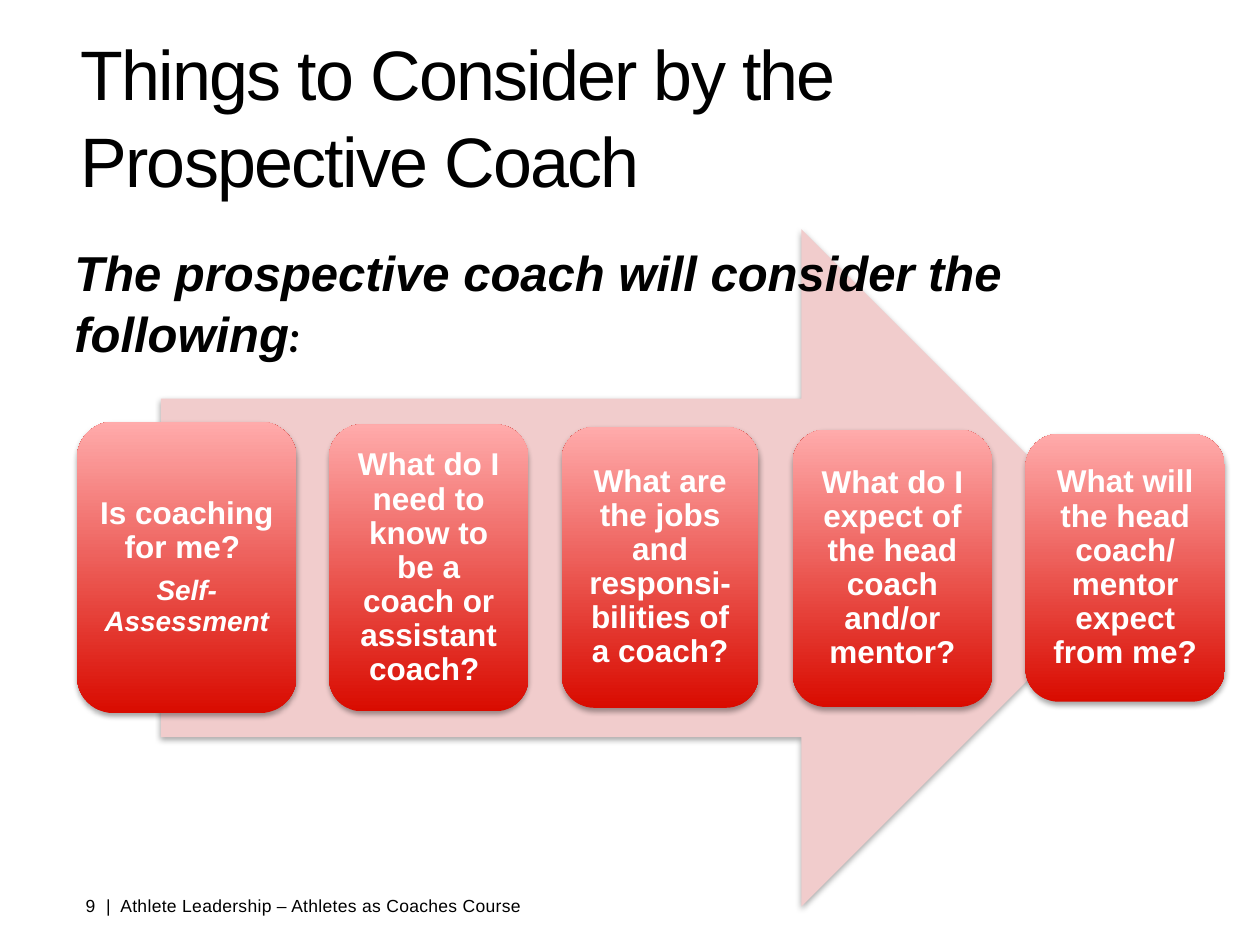
from pptx import Presentation
from pptx.dml.color import RGBColor
from pptx.enum.shapes import MSO_SHAPE as SHAPE
from pptx.enum.text import MSO_ANCHOR as ANCHOR, MSO_AUTO_SIZE as AUTO, PP_ALIGN as ALIGN
from pptx.oxml import parse_xml
from pptx.oxml.ns import nsdecls, qn
from pptx.util import Pt

STEPS = [
    (44, 241, 125.5, 166.5, ["Is coaching for me? ", "Self-Assessment"]),
    (188, 242.5, 114, 164, ["What do I need to know to be a coach or assistant coach? "]),
    (321, 244, 112.5, 160.5, ["What are the jobs and responsi-bilities of a coach?"]),
    (453, 245.5, 114, 158.5, ["What do I expect of the head coach and/or mentor?"]),
    (586, 248, 114, 153, ["What will the head coach/ mentor expect from me?"]),
]


def color(hex_value):
    return RGBColor.from_string(hex_value)


def style_run(r, size, hex_value="000000", bold=False, italic=False, name="Arial", spacing=0):
    r.font.name = name
    r.font.size = Pt(size)
    r.font.bold = bold
    r.font.italic = italic
    r.font.color.rgb = color(hex_value)
    if spacing:
        r._r.get_or_add_rPr().set("spc", str(spacing))


def set_frame(tf, inset_x, inset_y, anchor=ANCHOR.TOP, wrap=True):
    tf.margin_left = tf.margin_right = Pt(inset_x)
    tf.margin_top = tf.margin_bottom = Pt(inset_y)
    tf.vertical_anchor = anchor
    tf.word_wrap = wrap
    tf.auto_size = AUTO.NONE


def add_shape(s, kind, x, y, w, h):
    sp = s.shapes.add_shape(kind, Pt(x), Pt(y), Pt(w), Pt(h))
    sp.line.fill.background()
    sp.shadow.inherit = False
    effects = sp._element.spPr.find(qn("a:effectLst"))
    effects.append(parse_xml(
        f'<a:outerShdw {nsdecls("a")} blurRad="{Pt(3.1)}" dist="{Pt(1.8)}" dir="5400000" '
        'rotWithShape="0"><a:srgbClr val="000000"><a:alpha val="35000"/></a:srgbClr></a:outerShdw>'))
    return sp


def add_title(s, text):
    sp = s.shapes.title
    sp.left, sp.top, sp.width, sp.height = Pt(43), Pt(24.5), Pt(568), Pt(82)
    tf = sp.text_frame
    tf.text = text
    set_frame(tf, 3, 3, ANCHOR.MIDDLE)
    p = tf.paragraphs[0]
    p.alignment = ALIGN.LEFT
    p.line_spacing = 1.04
    style_run(p.runs[0], 40, spacing=-100)


def add_arrow(s):
    sp = add_shape(s, SHAPE.RIGHT_ARROW, 92, 131, 559.5, 387)
    sp.fill.solid()
    sp.fill.fore_color.rgb = color("F1CCCC")


def add_step(s, x, y, w, h, lines):
    sp = add_shape(s, SHAPE.ROUNDED_RECTANGLE, x, y, w, h)
    sp.fill.gradient()
    sp.fill.gradient_angle = 90
    for stop, hex_value in zip(sp.fill.gradient_stops, ("D90B00", "FFABAB")):
        stop.color.rgb = color(hex_value)
    tf = sp.text_frame
    tf.text = "\n".join(lines)
    set_frame(tf, 5, 5, ANCHOR.MIDDLE)
    for i, p in enumerate(tf.paragraphs):
        p.alignment = ALIGN.CENTER
        p.line_spacing = 0.9
        if i:
            p.space_before = Pt(6.3)
        style_run(p.runs[0], 16 if i else 18, "FFFFFF", bold=True, italic=i > 0)


def add_heading(s, text, mark):
    tf = s.shapes.add_textbox(Pt(35.5), Pt(133.5), Pt(651), Pt(75)).text_frame
    set_frame(tf, 7.2, 3.6)
    p = tf.paragraphs[0]
    p.text = text
    p.line_spacing = 1.04
    style_run(p.runs[0], 28, bold=True, italic=True)
    r = p.add_run()
    r.text = mark
    style_run(r, 24, bold=True, italic=True, name="Lato")


def add_footer(s, text):
    tf = s.shapes.add_textbox(Pt(44), Pt(508.5), Pt(291.5), Pt(14.5)).text_frame
    tf.text = text
    set_frame(tf, 5, 3, wrap=False)
    style_run(tf.paragraphs[0].runs[0], 10, spacing=20)


def main():
    prs = Presentation()
    prs.slide_width, prs.slide_height = Pt(720), Pt(540)
    s = prs.slides.add_slide(prs.slide_layouts[5])
    add_footer(s, "9  |  Athlete Leadership – Athletes as Coaches Course")
    add_title(s, "Things to Consider by the Prospective Coach")
    add_arrow(s)
    for step in STEPS:
        add_step(s, *step)
    add_heading(s, "The prospective coach will consider the following", ":")
    prs.save("out.pptx")


if __name__ == "__main__":
    main()
